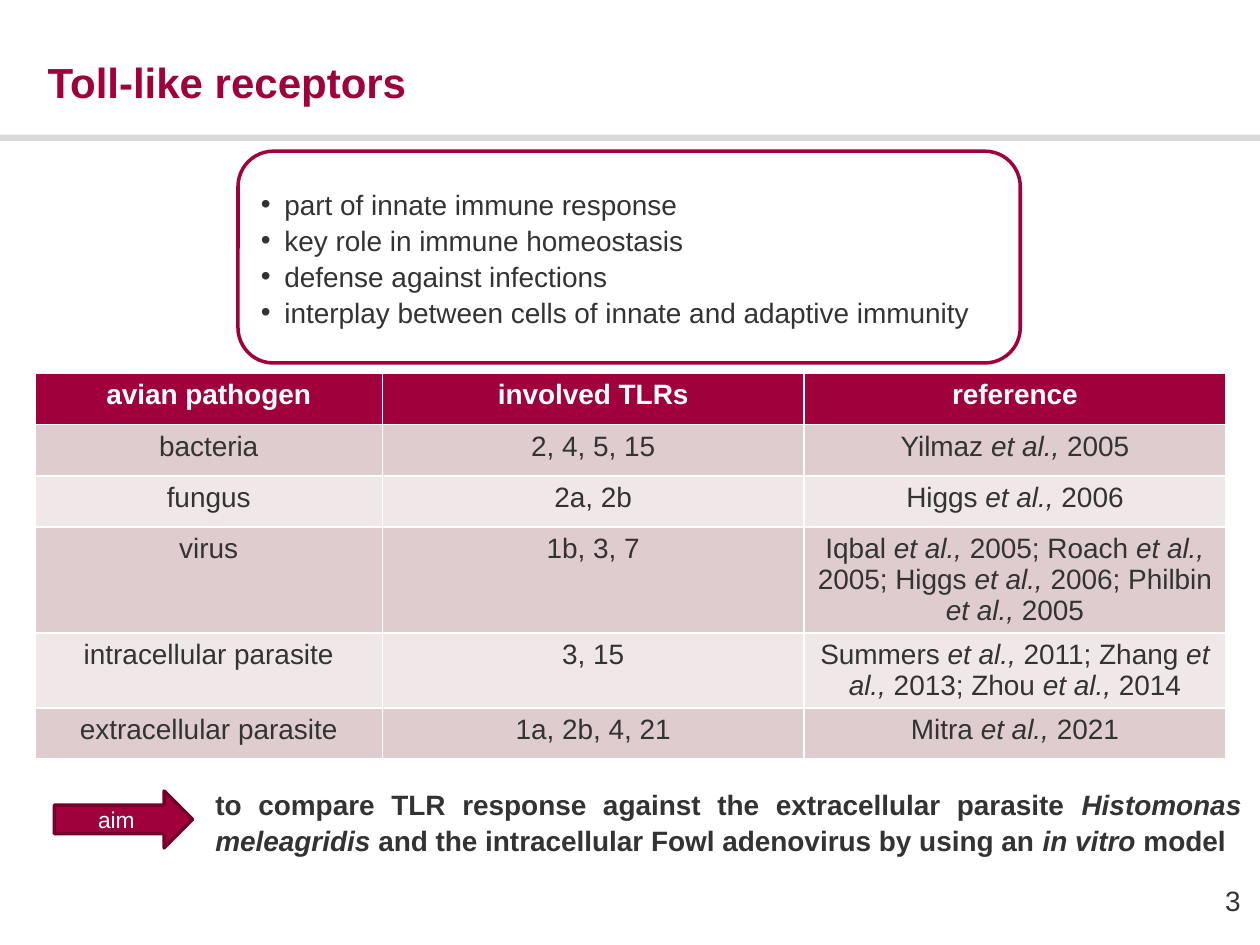
from pptx import Presentation
from pptx.dml.color import RGBColor
from pptx.enum.shapes import MSO_SHAPE as Shape
from pptx.enum.text import MSO_ANCHOR as Anchor, MSO_AUTO_SIZE as AutoSize, PP_ALIGN as Align
from pptx.util import Pt

COLORS = {
    "crimson": "A0003C", "dark_crimson": "76002C", "text": "333333", "white": "FFFFFF",
    "rule": "DADADA", "odd_row": "DFCCCE", "even_row": "F0E7E8",
}
FONT = "Arial"

# Asterisks enclose italic words.
TITLE = "Toll-like receptors"
ROLES = [
    "part of innate immune response",
    "key role in immune homeostasis",
    "defense against infections",
    "interplay between cells of innate and adaptive immunity",
]
PATHOGENS = [
    ("avian pathogen", "involved TLRs", "reference"),
    ("bacteria", "2, 4, 5, 15", "Yilmaz *et al.,* 2005"),
    ("fungus", "2a, 2b", "Higgs *et al.,* 2006"),
    ("virus", "1b, 3, 7", "Iqbal *et al.,* 2005; Roach *et al.,* 2005; "
                          "Higgs *et al.,* 2006; Philbin *et al.,* 2005"),
    ("intracellular parasite", "3, 15",
     "Summers *et al.,* 2011; Zhang *et al.,* 2013; Zhou *et al.,* 2014"),
    ("extracellular parasite", "1a, 2b, 4, 21", "Mitra *et al.,* 2021"),
]
AIM = ("to compare TLR response against the extracellular parasite *Histomonas meleagridis* "
       "and the intracellular Fowl adenovirus by using an *in vitro* model")
PAGE_NUMBER = "3"

COLUMN_WIDTHS = (198.5, 241, 241)
ROW_HEIGHT = 29.3
BOX_AREA = (136, 86.4, 447, 121)


def color(name):
    return RGBColor.from_string(COLORS[name])


def place(shape, left, top, width, height):
    shape.left, shape.top, shape.width, shape.height = map(Pt, (left, top, width, height))


def write(paragraph, text, size=16, ink="text", bold=False, align=Align.LEFT, spacing=1.0):
    """Fill a paragraph, turning parts between asterisks into italic runs."""
    paragraph.alignment = align
    paragraph.line_spacing = spacing
    paragraph.space_before = Pt(0)
    for index, part in enumerate(text.split("*")):
        if part:
            run = paragraph.add_run()
            run.text = part
            font = run.font
            font.name, font.size, font.bold = FONT, Pt(size), bold
            font.italic = index % 2 == 1
            font.color.rgb = color(ink)


def add_shape(slide, kind, area, fill=None, line=None):
    shape = slide.shapes.add_shape(kind, *map(Pt, area))
    shape.shadow.inherit = False
    if fill:
        shape.fill.solid()
        shape.fill.fore_color.rgb = color(fill)
    else:
        shape.fill.background()
    if line:
        shape.line.color.rgb = color(line)
        shape.line.width = Pt(2)
    else:
        shape.line.fill.background()
    return shape


def add_text(slide, area, text, anchor=Anchor.TOP, **style):
    frame = slide.shapes.add_textbox(*map(Pt, area)).text_frame
    frame.word_wrap = True
    frame.vertical_anchor = anchor
    write(frame.paragraphs[0], text, **style)
    return frame


def add_title(slide):
    title = slide.shapes.title
    place(title, 20, 26, 567, 57)
    frame = title.text_frame
    frame.auto_size = AutoSize.NONE
    frame.vertical_anchor = Anchor.TOP
    write(frame.paragraphs[0], TITLE, size=24, ink="crimson", bold=True, spacing=1.1)


def add_roles(slide):
    add_shape(slide, Shape.ROUNDED_RECTANGLE, BOX_AREA, line="crimson")
    body = slide.placeholders[1]
    place(body, *BOX_AREA)
    frame = body.text_frame
    frame.auto_size = AutoSize.NONE
    frame.vertical_anchor = Anchor.MIDDLE
    frame.margin_left = frame.margin_right = Pt(13)
    for index, role in enumerate(ROLES):
        paragraph = frame.add_paragraph() if index else frame.paragraphs[0]
        properties = paragraph._p.get_or_add_pPr()
        properties.set("marL", str(Pt(13.5)))
        properties.set("indent", str(-Pt(13.5)))
        write(paragraph, role, spacing=1.07)


def add_pathogen_table(slide):
    row_count, column_count = len(PATHOGENS), len(COLUMN_WIDTHS)
    table = slide.shapes.add_table(
        row_count, column_count, Pt(20), Pt(213.4),
        Pt(sum(COLUMN_WIDTHS)), Pt(ROW_HEIGHT * row_count)).table
    for column, width in zip(table.columns, COLUMN_WIDTHS):
        column.width = Pt(width)
    for row_index, row in enumerate(PATHOGENS):
        header = row_index == 0
        fill = "crimson" if header else "odd_row" if row_index % 2 else "even_row"
        for column_index, text in enumerate(row):
            cell = table.cell(row_index, column_index)
            cell.fill.solid()
            cell.fill.fore_color.rgb = color(fill)
            write(cell.text_frame.paragraphs[0], text, bold=header,
                  ink="white" if header else "text", align=Align.CENTER)


def add_aim(slide):
    arrow = add_shape(slide, Shape.RIGHT_ARROW, (31, 452, 79, 32.5), "crimson", "dark_crimson")
    frame = arrow.text_frame
    frame.vertical_anchor = Anchor.MIDDLE
    write(frame.paragraphs[0], "aim", size=13, ink="white", align=Align.CENTER)
    add_text(slide, (116, 445, 600.5, 46), AIM, bold=True, align=Align.JUSTIFY, spacing=1.07)


def main():
    presentation = Presentation()
    presentation.slide_width, presentation.slide_height = Pt(720), Pt(540)
    slide = presentation.slides.add_slide(presentation.slide_layouts[1])
    add_shape(slide, Shape.RECTANGLE, (0, 77, 720, 3.6), fill="rule")
    add_title(slide)
    add_roles(slide)
    add_pathogen_table(slide)
    add_aim(slide)
    number = add_text(slide, (665, 500, 44, 29), PAGE_NUMBER, Anchor.MIDDLE, align=Align.RIGHT)
    number.margin_left = number.margin_right = 0
    presentation.save("out.pptx")


if __name__ == "__main__":
    main()
